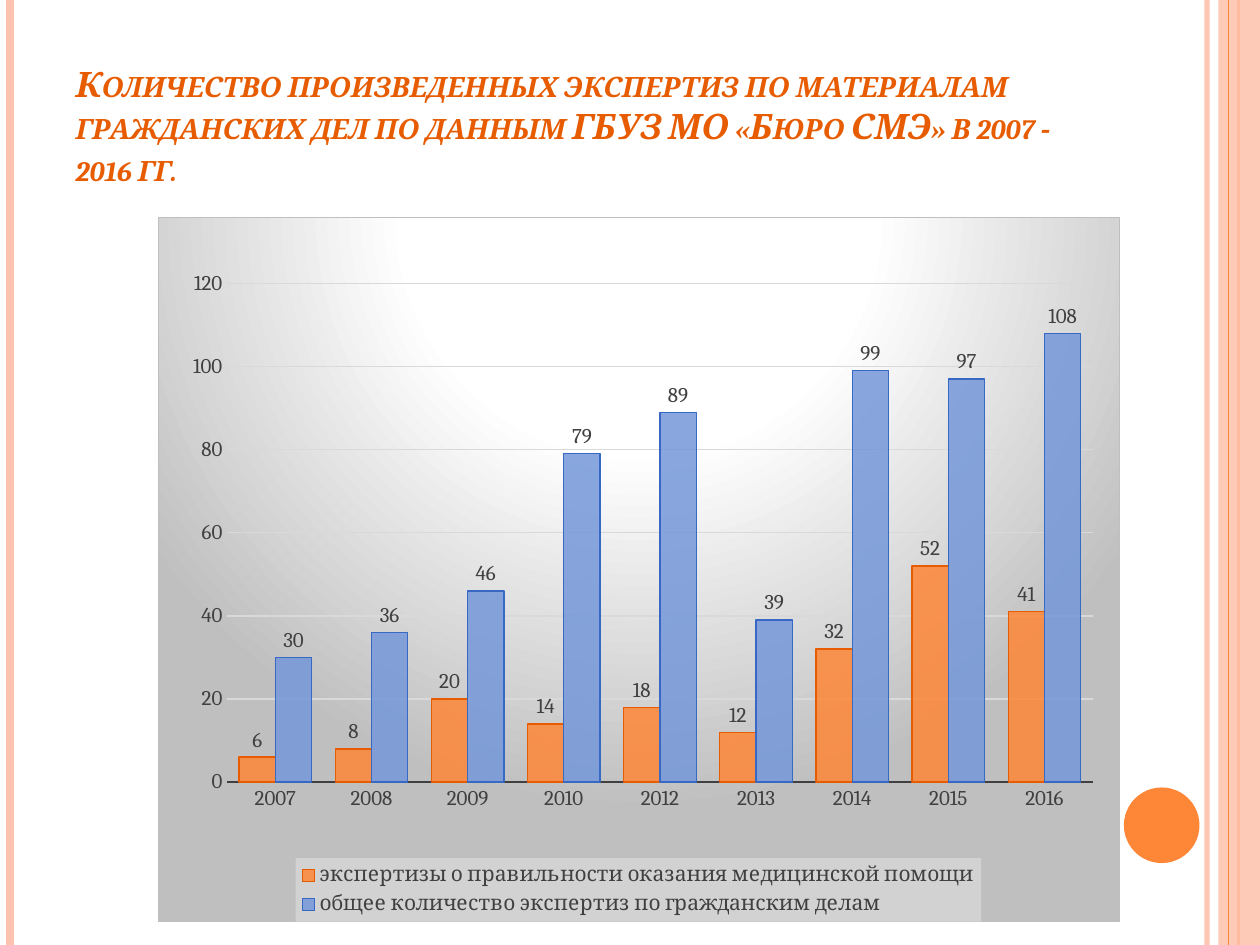
from dataclasses import dataclass

from lxml.etree import SubElement
from pptx import Presentation
from pptx.chart.data import CategoryChartData
from pptx.dml.color import RGBColor
from pptx.enum.chart import XL_CHART_TYPE, XL_LABEL_POSITION, XL_LEGEND_POSITION, XL_TICK_MARK
from pptx.enum.shapes import MSO_CONNECTOR, MSO_SHAPE
from pptx.enum.text import MSO_ANCHOR, PP_ALIGN
from pptx.oxml import parse_xml
from pptx.oxml.ns import qn
from pptx.util import Inches, Pt


@dataclass(frozen=True)
class Theme:
    font: str = "Cambria"
    title_size: int = 20
    label_size: int = 12
    chart_size: int = 10
    title: str = "E75C01"
    accent: str = "FE8637"
    pale: str = "FEC3AE"
    blue: str = "7598D9"
    blue_edge: str = "3668C4"
    ink: str = "404040"
    black: str = "000000"
    grid: str = "D9D9D9"
    shade: str = "BFBFBF"
    legend: str = "F2F2F2"
    white: str = "FFFFFF"


THEME = Theme()
NAMESPACES = (
    'xmlns:c="http://schemas.openxmlformats.org/drawingml/2006/chart" '
    'xmlns:a="http://schemas.openxmlformats.org/drawingml/2006/main"'
)
TITLE = (
    "Количество произведенных экспертиз по материалам гражданских дел "
    "по данным ГБУЗ МО «Бюро СМЭ» в 2007 ‑ 2016 гг."
)
YEARS = ["2007", "2008", "2009", "2010", "2012", "2013", "2014", "2015", "2016"]
# Name, values, fill, outline
SERIES = [
    ("экспертизы о правильности оказания медицинской помощи",
     (6, 8, 20, 14, 18, 12, 32, 52, 41), THEME.accent, THEME.title),
    ("общее количество экспертиз по гражданским делам",
     (30, 36, 46, 79, 89, 39, 99, 97, 108), THEME.blue, THEME.blue_edge),
]


def format_font(font, size=THEME.label_size, color=THEME.ink, bold=False, italic=False):
    font.name, font.size = THEME.font, Pt(size)
    font.bold, font.italic = bold, italic
    font.color.rgb = RGBColor.from_string(color)


def write_text(frame, text, align=PP_ALIGN.LEFT, small_caps=False, **font_format):
    paragraph = frame.paragraphs[0]
    paragraph.alignment = align
    run = paragraph.add_run()
    run.text = text
    format_font(run.font, **font_format)
    if small_caps:
        run.font._element.set("cap", "small")


def set_line(line, color, width):
    line.color.rgb = RGBColor.from_string(color)
    line.width = Pt(width)


def set_fill(fill, color):
    fill.solid()
    fill.fore_color.rgb = RGBColor.from_string(color)


def set_alpha(properties, percent):
    """Make the first colour in the shape properties partly transparent."""
    color = next(properties.iter(qn("a:srgbClr")))
    SubElement(color, qn("a:alpha")).set("val", str(percent * 1000))


def set_layout(element, index, x, y, w, h, inner=False):
    for old in element.findall(qn("c:layout")):
        element.remove(old)
    target = '<c:layoutTarget val="inner"/>' if inner else ""
    element.insert(index, parse_xml(
        f'<c:layout {NAMESPACES}><c:manualLayout>{target}'
        '<c:xMode val="edge"/><c:yMode val="edge"/>'
        f'<c:x val="{x}"/><c:y val="{y}"/><c:w val="{w}"/><c:h val="{h}"/>'
        '</c:manualLayout></c:layout>'))


def add_stripe(slide, x, height, color, width, alpha=100):
    stripe = slide.shapes.add_connector(
        MSO_CONNECTOR.STRAIGHT, Inches(x), 0, Inches(x), height)
    set_line(stripe.line, color, width)
    properties = stripe._element.spPr
    SubElement(properties, qn("a:effectLst"))
    if alpha < 100:
        set_alpha(properties, alpha)


def add_block(slide, kind, box, color):
    block = slide.shapes.add_shape(kind, *box)
    block.shadow.inherit = False
    set_fill(block.fill, color)
    block.line.fill.background()
    return block


def add_frame(slide, width, height):
    """Side stripes, right band and disc."""
    add_stripe(slide, 9.58, height, THEME.pale, 3, alpha=93)
    add_stripe(slide, 0.08, height, THEME.pale, 4.5)
    add_stripe(slide, 9.83, height, THEME.accent, 1.5)
    band_left = Inches(9.67)
    band = add_block(slide, MSO_SHAPE.RECTANGLE,
                     (band_left, 0, width - band_left, height), THEME.pale)
    set_alpha(band._element.spPr, 87)
    add_stripe(slide, 9.75, height, THEME.accent, 0.75)
    add_block(slide, MSO_SHAPE.OVAL,
              (Inches(8.92), Inches(6.25), Inches(0.6), Inches(0.6)), THEME.accent)


def add_title(slide, box):
    title = slide.shapes.title
    title.left, title.top, title.width, title.height = box
    title.text_frame.vertical_anchor = MSO_ANCHOR.BOTTOM
    title.text_frame.word_wrap = True
    write_text(title.text_frame, TITLE, small_caps=True, size=THEME.title_size,
               color=THEME.title, bold=True, italic=True)


def style_background(chart):
    """Radial gradient behind the whole chart."""
    stops = "".join(
        f'<a:gs pos="{position * 1000}"><a:srgbClr val="{color}"/></a:gs>'
        for position, color in ((0, THEME.white), (39, THEME.white), (100, THEME.shade)))
    chart._chartSpace.find(qn("c:chart")).addnext(parse_xml(
        f'<c:spPr {NAMESPACES}><a:gradFill><a:gsLst>{stops}</a:gsLst>'
        '<a:path path="circle">'
        '<a:fillToRect l="50000" t="-80000" r="50000" b="180000"/></a:path></a:gradFill>'
        f'<a:ln w="{Pt(0.75)}"><a:solidFill><a:srgbClr val="{THEME.shade}"/></a:solidFill>'
        '</a:ln></c:spPr>'))


def style_axes(chart):
    years, counts = chart.category_axis, chart.value_axis
    for axis in (years, counts):
        axis.major_tick_mark = axis.minor_tick_mark = XL_TICK_MARK.NONE
        format_font(axis.tick_labels.font)
    set_line(years.format.line, THEME.ink, 1.5)
    counts.minimum_scale, counts.maximum_scale, counts.major_unit = 0, 120, 20
    counts.format.line.fill.background()
    set_line(counts.major_gridlines.format.line, THEME.grid, 0.75)


def style_legend(chart):
    chart.has_legend = True
    legend = chart.legend
    legend.position = XL_LEGEND_POSITION.BOTTOM
    legend.include_in_layout = False
    format_font(legend.font)
    set_layout(legend._element, 1, 0.143, 0.91, 0.713, 0.09)
    legend._element.find(qn("c:txPr")).addprevious(parse_xml(
        f'<c:spPr {NAMESPACES}><a:solidFill><a:srgbClr val="{THEME.legend}">'
        '<a:alpha val="39000"/></a:srgbClr></a:solidFill></c:spPr>'))


def add_expertise_chart(slide, box):
    data = CategoryChartData()
    data.categories = YEARS
    for name, values, *_ in SERIES:
        data.add_series(name, values)
    chart = slide.shapes.add_chart(XL_CHART_TYPE.COLUMN_CLUSTERED, *box, data).chart
    chart.has_title = False
    format_font(chart.font, size=THEME.chart_size, color=THEME.black)

    plot = chart.plots[0]
    plot.gap_width, plot.overlap, plot.vary_by_categories = 65, 0, False
    for series, (_, _, color, edge) in zip(plot.series, SERIES):
        set_fill(series.format.fill, color)
        set_line(series.format.line, edge, 0.75)
        set_alpha(series._element.spPr, 85)
        labels = series.data_labels
        labels.show_value = True
        labels.position = XL_LABEL_POSITION.OUTSIDE_END
        format_font(labels.font)

    style_axes(chart)
    style_legend(chart)
    style_background(chart)
    set_layout(chart._chartSpace.chart.plotArea, 0, 0.072, 0.094, 0.9, 0.708, inner=True)


def main():
    deck = Presentation()
    deck.slide_width, deck.slide_height = Inches(10), Inches(7.5)
    slide = deck.slides.add_slide(deck.slide_layouts[5])
    add_frame(slide, deck.slide_width, deck.slide_height)
    add_title(slide, (Inches(0.5), Inches(0.3), Inches(8.17), Inches(1.25)))
    add_expertise_chart(slide, (Inches(1.25), Inches(1.72), Inches(7.64), Inches(5.6)))
    deck.save("out.pptx")


if __name__ == "__main__":
    main()
